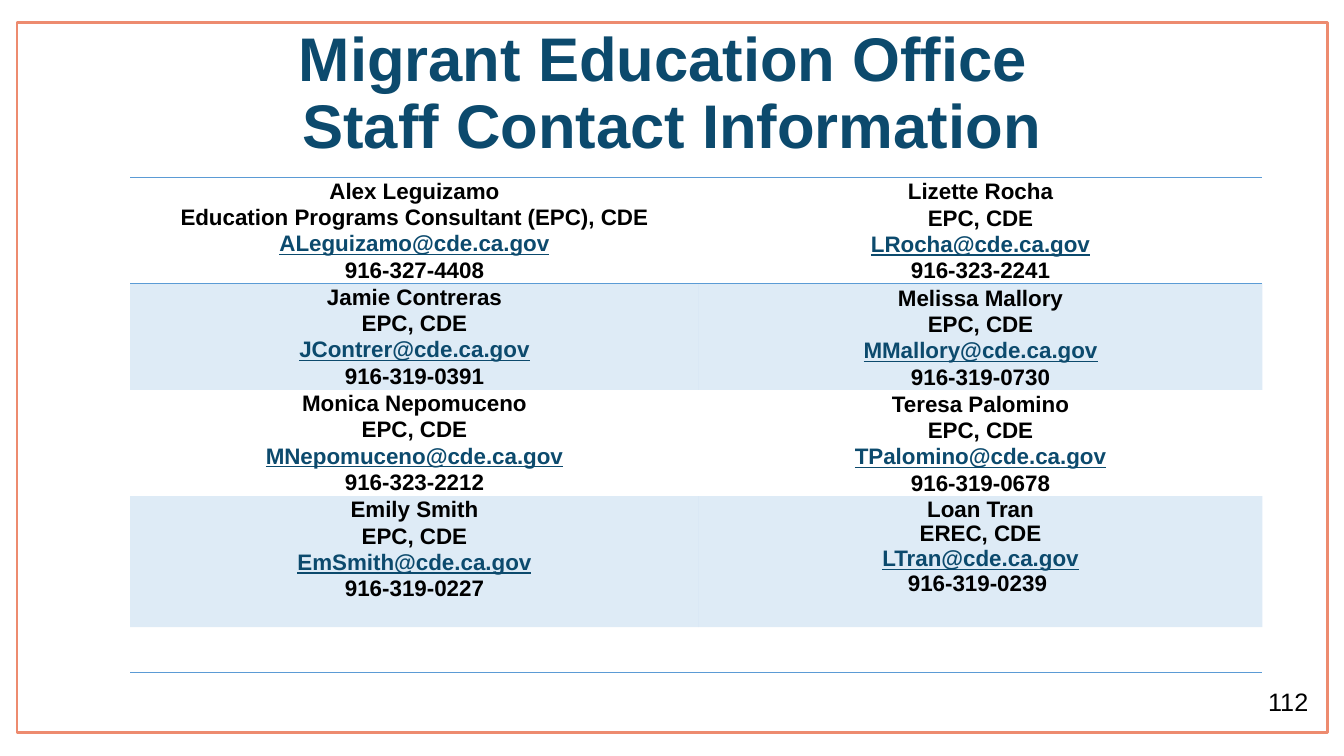
from lxml.etree import SubElement
from pptx import Presentation
from pptx.dml.color import RGBColor
from pptx.enum.shapes import MSO_SHAPE
from pptx.enum.text import MSO_ANCHOR, PP_ALIGN
from pptx.oxml import parse_xml
from pptx.oxml.ns import nsdecls, qn
from pptx.util import Cm, Pt

COLORS = {"frame": "ED8B6F", "navy": "0C4A6D", "black": "000000", "blue": "5B9BD5"}
FRAME = (Cm(0.43), Cm(0.56), Cm(33.02), Cm(17.91))
TITLE = (Cm(0.43), Cm(0.56), Cm(33.02), Cm(3.68))
COLUMN_WIDTHS = (14.33, 14.2)
ROW_HEIGHTS = (2.64, 2.64, 2.64, 3.3, 1.14)
COLUMN_MARGINS = ((0, 0), (0.13, 0.02))
RULED_EDGES = {0: "TB", 1: "T", 4: "B"}
BANDED_ROWS = (1, 3)
CONTACTS = [
    [("Alex Leguizamo", "Education Programs Consultant (EPC), CDE",
      "ALeguizamo@cde.ca.gov", "916-327-4408"),
     ("Lizette Rocha", "EPC, CDE", "LRocha@cde.ca.gov", "916-323-2241")],
    [("Jamie Contreras", "EPC, CDE", "JContrer@cde.ca.gov", "916-319-0391"),
     ("Melissa Mallory", "EPC, CDE", "MMallory@cde.ca.gov", "916-319-0730")],
    [("Monica Nepomuceno", "EPC, CDE", "MNepomuceno@cde.ca.gov", "916-323-2212"),
     ("Teresa Palomino", "EPC, CDE", "TPalomino@cde.ca.gov", "916-319-0678")],
    [("Emily Smith", "EPC, CDE", "EmSmith@cde.ca.gov", "916-319-0227"),
     ("Loan Tran", "EREC, CDE", "LTran@cde.ca.gov", "916-319-0239 ")],
]


def rgb(name):
    """Return the named colour."""
    return RGBColor.from_string(COLORS[name])


def style_paragraph(para, size, color, align, bold=False, spacing=None):
    """Set the font and layout of one paragraph."""
    para.alignment = align
    para.line_spacing = spacing
    para.font.name = "Arial"
    para.font.size = Pt(size)
    para.font.bold = bold
    para.font.color.rgb = rgb(color)


def add_frame(page):
    """Draw the outline around the slide."""
    frame = page.shapes.add_shape(MSO_SHAPE.RECTANGLE, *FRAME)
    frame.shadow.inherit = False
    frame.fill.background()
    frame.line.color.rgb = rgb("frame")
    frame.line.width = Pt(2)


def set_title(page, text):
    """Place and format the title placeholder."""
    title = page.shapes.title
    title.left, title.top, title.width, title.height = TITLE
    title.text_frame.text = text
    title.text_frame.vertical_anchor = MSO_ANCHOR.MIDDLE
    style_paragraph(title.text_frame.paragraphs[0], 44, "navy", PP_ALIGN.CENTER, True, 0.9)


def set_borders(cell, ruled):
    """Draw the ruled edges of a cell and clear the others."""
    properties = cell._tc.get_or_add_tcPr()
    for index, edge in enumerate("LRTB"):
        line = parse_xml(f'<a:ln{edge} {nsdecls("a")} w="12700"/>')
        if edge in ruled:
            fill = SubElement(line, qn("a:solidFill"))
            SubElement(fill, qn("a:srgbClr"), val=COLORS["blue"])
        else:
            SubElement(line, qn("a:noFill"))
        properties.insert(index, line)


def fill_cell(cell, banded):
    """Give a cell a pale blue band or no fill."""
    if not banded:
        cell.fill.background()
        return
    cell.fill.solid()
    cell.fill.fore_color.rgb = rgb("blue")
    color = cell._tc.tcPr.find(".//" + qn("a:srgbClr"))
    SubElement(color, qn("a:alpha"), val="20000")


def write_contact(cell, contact, spacing):
    """Write name, role, e-mail and phone as centred lines."""
    cell.text_frame.text = "\n".join(contact)
    for para in cell.text_frame.paragraphs:
        is_email = "@" in para.text
        style_paragraph(para, 16, "navy" if is_email else "black",
                        PP_ALIGN.CENTER, True, spacing)
        para.font.underline = is_email


def add_contact_table(page):
    """Build the table of staff contacts."""
    table = page.shapes.add_table(
        len(ROW_HEIGHTS), len(COLUMN_WIDTHS), Cm(3.28), Cm(4.47),
        Cm(sum(COLUMN_WIDTHS)), Cm(sum(ROW_HEIGHTS))).table
    table.first_row = table.horz_banding = False
    for column, width in zip(table.columns, COLUMN_WIDTHS):
        column.width = Cm(width)
    for r, height in enumerate(ROW_HEIGHTS):
        table.rows[r].height = Cm(height)
        for c, (side, top) in enumerate(COLUMN_MARGINS):
            cell = table.cell(r, c)
            cell.margin_left = cell.margin_right = Cm(side)
            cell.margin_top, cell.margin_bottom = Cm(top), Cm(0)
            fill_cell(cell, r in BANDED_ROWS)
            set_borders(cell, RULED_EDGES.get(r, ""))
            if r < len(CONTACTS):
                contact = CONTACTS[r][c]
                write_contact(cell, contact, None if contact[0] == "Loan Tran" else 1.06)


def add_page_number(page, number):
    """Write the page number at the lower right."""
    box = page.shapes.add_textbox(Cm(25.32), Cm(17.17), Cm(7.9), Cm(1.02))
    box.text_frame.word_wrap = True
    box.text_frame.text = number
    style_paragraph(box.text_frame.paragraphs[0], 18, "black", PP_ALIGN.RIGHT)


def main():
    """Build and save the slide."""
    deck = Presentation()
    deck.slide_width, deck.slide_height = Cm(33.87), Cm(19.05)
    page = deck.slides.add_slide(deck.slide_layouts[5])
    add_frame(page)
    set_title(page, "Migrant Education Office \vStaff Contact Information")
    add_contact_table(page)
    add_page_number(page, "112")
    deck.save("out.pptx")


if __name__ == "__main__":
    main()
